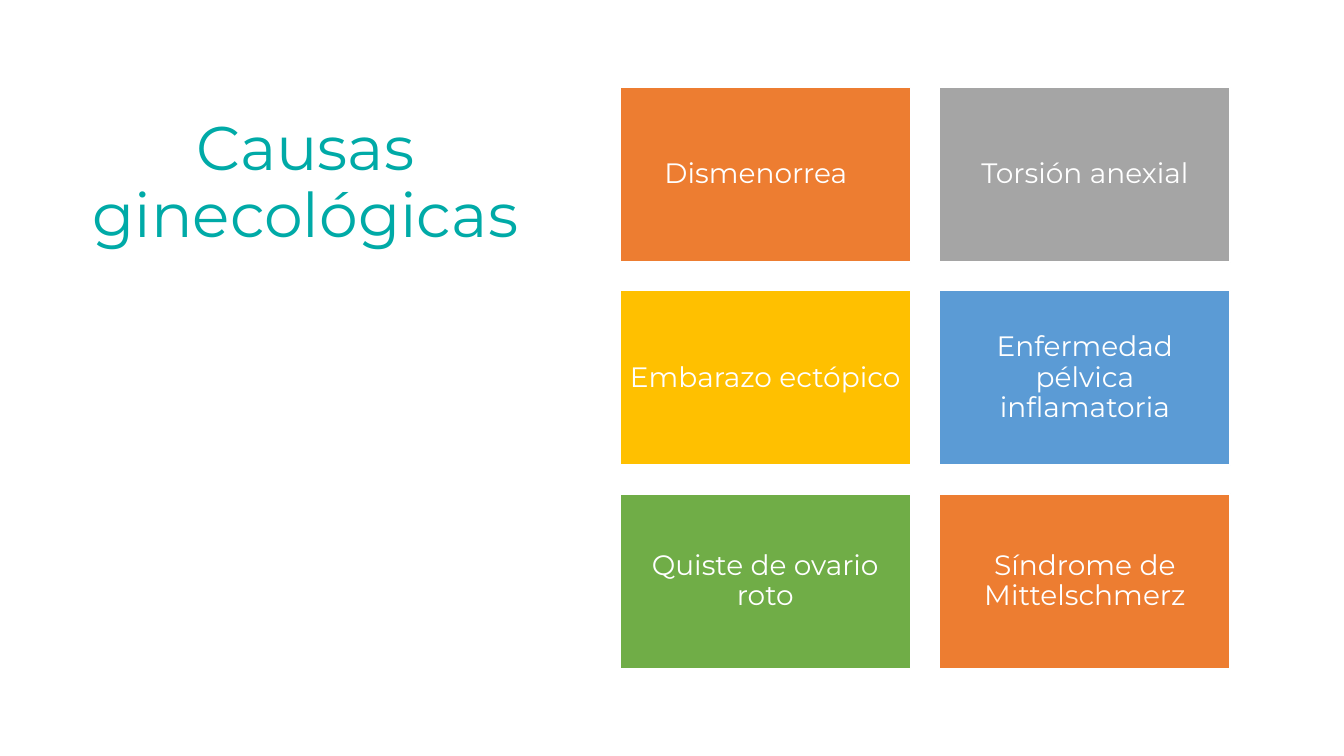
from dataclasses import dataclass

from pptx import Presentation
from pptx.dml.color import RGBColor
from pptx.enum.shapes import MSO_SHAPE
from pptx.enum.text import MSO_ANCHOR, PP_ALIGN
from pptx.util import Inches, Pt

RECTANGLE = MSO_SHAPE.RECTANGLE
MIDDLE = MSO_ANCHOR.MIDDLE
CENTER = PP_ALIGN.CENTER


@dataclass(frozen=True)
class Theme:
    """Colours, font and type sizes of the slide."""
    font: str = "Montserrat"
    title: str = "00AAA7"
    white: str = "FFFFFF"
    orange: str = "ED7D31"
    gray: str = "A5A5A5"
    yellow: str = "FFC000"
    blue: str = "5B9BD5"
    green: str = "70AD47"
    title_size: int = 44
    card_size: int = 20


THEME = Theme()
CAUSES = [
    ("Dismenorrea\t", THEME.orange),
    ("Torsión anexial", THEME.gray),
    ("Embarazo ectópico", THEME.yellow),
    ("Enfermedad pélvica inflamatoria", THEME.blue),
    ("Quiste de ovario roto", THEME.green),
    ("Síndrome de Mittelschmerz", THEME.orange),
]
COLUMNS = 2
GRID_LEFT, GRID_TOP = 6.15, 0.87
CARD_WIDTH, CARD_HEIGHT = 2.88, 1.73
STEP_X, STEP_Y = 3.17, 2.015


def write_text(tf, text, size, color):
    """Write one centred paragraph into a text frame."""
    tf.word_wrap = True
    tf.vertical_anchor = MIDDLE
    p = tf.paragraphs[0]
    p.alignment = CENTER
    p.line_spacing = 0.9
    r = p.add_run()
    r.text = text
    r.font.name = THEME.font
    r.font.size = Pt(size)
    r.font.color.rgb = RGBColor.from_string(color)


def add_title(s, text):
    """Add the slide title."""
    box = s.shapes.add_textbox(Inches(0.6), Inches(1.1), Inches(4.86), Inches(1.45))
    write_text(box.text_frame, text, THEME.title_size, THEME.title)


def add_card(s, left, top, text, fill):
    """Add one coloured card with its cause."""
    sp = s.shapes.add_shape(RECTANGLE, Inches(left), Inches(top),
                            Inches(CARD_WIDTH), Inches(CARD_HEIGHT))
    sp.shadow.inherit = False
    sp.fill.solid()
    sp.fill.fore_color.rgb = RGBColor.from_string(fill)
    sp.line.color.rgb = RGBColor.from_string(THEME.white)
    sp.line.width = Pt(1)
    tf = sp.text_frame
    tf.margin_left = tf.margin_right = tf.margin_top = tf.margin_bottom = Inches(0.08)
    write_text(tf, text, THEME.card_size, THEME.white)


def main():
    """Build the slide and save it."""
    prs = Presentation()
    prs.slide_width, prs.slide_height = Inches(13.33), Inches(7.5)
    s = prs.slides.add_slide(prs.slide_layouts[6])
    add_title(s, "Causas ginecológicas")
    for i, (cause, fill) in enumerate(CAUSES):
        row, column = divmod(i, COLUMNS)
        add_card(s, GRID_LEFT + column * STEP_X, GRID_TOP + row * STEP_Y, cause, fill)
    prs.save("out.pptx")


if __name__ == "__main__":
    main()
